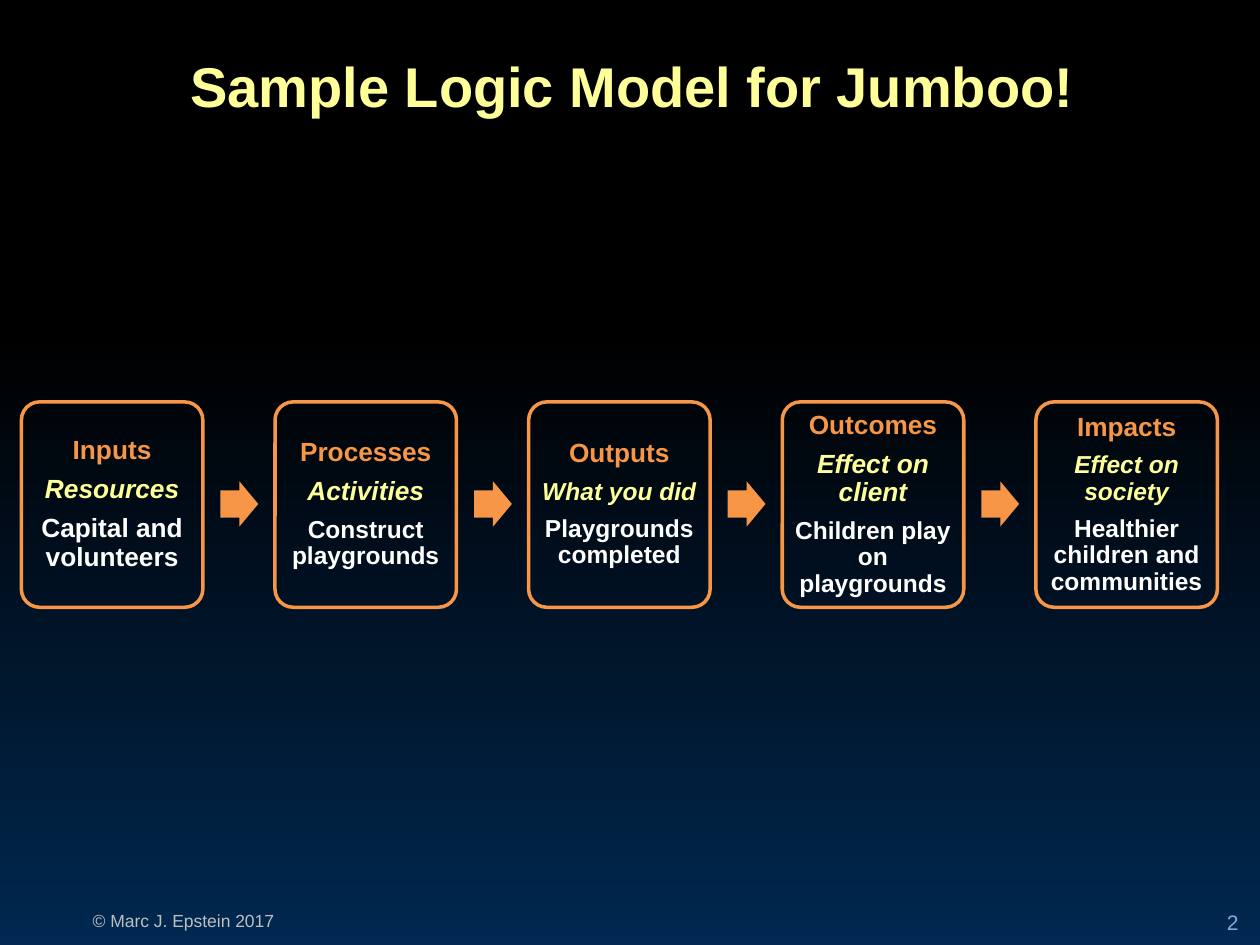
from pptx import Presentation
from pptx import util as u
from pptx.dml.color import RGBColor
from pptx.enum import shapes, text

COLORS = {
    "black": "000000",
    "navy": "002850",
    "orange": "F79646",
    "yellow": "FFFF99",
    "white": "FFFFFF",
    "gray": "BFBFBF",
    "blue": "81ABE0",
}


def write(content, paragraph, size, color, bold=False, italic=False,
          align=text.PP_ALIGN.CENTER, spacing=1.0, after=0):
    paragraph.alignment = align
    paragraph.line_spacing = spacing
    paragraph.space_before = u.Pt(0)
    paragraph.space_after = u.Pt(after)
    run = paragraph.add_run()
    run.text = content
    font = run.font
    font.name = "Arial"
    font.size = u.Pt(size)
    font.bold = bold
    font.italic = italic
    font.color.rgb = RGBColor.from_string(COLORS[color])


def set_frame(frame, anchor, margin_x, margin_y):
    frame.word_wrap = True
    frame.auto_size = text.MSO_AUTO_SIZE.NONE
    frame.vertical_anchor = anchor
    frame.margin_left = frame.margin_right = u.Inches(margin_x)
    frame.margin_top = frame.margin_bottom = u.Inches(margin_y)


presentation = Presentation()
presentation.slide_width = u.Inches(10)
presentation.slide_height = u.Inches(7.5)
slide = presentation.slides.add_slide(presentation.slide_layouts[5])

background = slide.background.fill
background.gradient()
background.gradient_angle = 270
for stop, position, color in zip(background.gradient_stops, (0.35, 1), ("black", "navy")):
    stop.position = position
    stop.color.rgb = RGBColor.from_string(COLORS[color])

title = slide.shapes.title
title.left, title.top = u.Inches(0), u.Inches(0.36)
title.width, title.height = u.Inches(10.04), u.Inches(0.64)
set_frame(title.text_frame, text.MSO_ANCHOR.TOP, 0.1, 0.05)
write("Sample Logic Model for Jumboo!", title.text_frame.paragraphs[0],
      size=32, color="yellow", bold=True)

stages = [
    (("Inputs", 15), ("Resources", 15), ("Capital and volunteers", 15)),
    (("Processes", 15), ("Activities", 15), ("Construct playgrounds", 14)),
    (("Outputs", 15), ("What you did", 14), ("Playgrounds completed", 14)),
    (("Outcomes", 15), ("Effect on client", 15), ("Children play on playgrounds", 14)),
    (("Impacts", 15), ("Effect on society", 14), ("Healthier children and communities", 14)),
]
first_left, pitch = 0.17, 2.013
line_colors = ("orange", "yellow", "white")

for index, stage in enumerate(stages):
    left = first_left + index * pitch
    box = slide.shapes.add_shape(
        shapes.MSO_SHAPE.ROUNDED_RECTANGLE,
        u.Inches(left), u.Inches(3.19), u.Inches(1.44), u.Inches(1.63))
    box.adjustments[0] = 0.1
    box.shadow.inherit = False
    box.fill.background()
    box.line.color.rgb = RGBColor.from_string(COLORS["orange"])
    box.line.width = u.Pt(2)
    frame = box.text_frame
    set_frame(frame, text.MSO_ANCHOR.MIDDLE, 0.06, 0.06)
    for row, ((content, size), color) in enumerate(zip(stage, line_colors)):
        paragraph = frame.add_paragraph() if row else frame.paragraphs[0]
        write(content, paragraph, size=size, color=color, bold=True,
              italic=row == 1, spacing=0.9, after=6)

    if index < len(stages) - 1:
        arrow = slide.shapes.add_shape(
            shapes.MSO_SHAPE.RIGHT_ARROW,
            u.Inches(left + 1.58), u.Inches(3.82), u.Inches(0.3), u.Inches(0.36))
        arrow.adjustments[0] = 0.6
        arrow.adjustments[1] = 0.5
        arrow.shadow.inherit = False
        arrow.fill.solid()
        arrow.fill.fore_color.rgb = RGBColor.from_string(COLORS["orange"])
        arrow.line.fill.background()

footer = slide.shapes.add_textbox(
    u.Inches(-0.17), u.Inches(7.17), u.Inches(3.25), u.Inches(0.27))
set_frame(footer.text_frame, text.MSO_ANCHOR.TOP, 0.05, 0.05)
write("© Marc J. Epstein 2017", footer.text_frame.paragraphs[0], size=10, color="gray")

number = slide.shapes.add_textbox(
    u.Inches(9), u.Inches(7.02), u.Inches(0.83), u.Inches(0.4))
set_frame(number.text_frame, text.MSO_ANCHOR.BOTTOM, 0, 0)
write("2", number.text_frame.paragraphs[0], size=12, color="blue",
      align=text.PP_ALIGN.RIGHT)

presentation.save("out.pptx")
